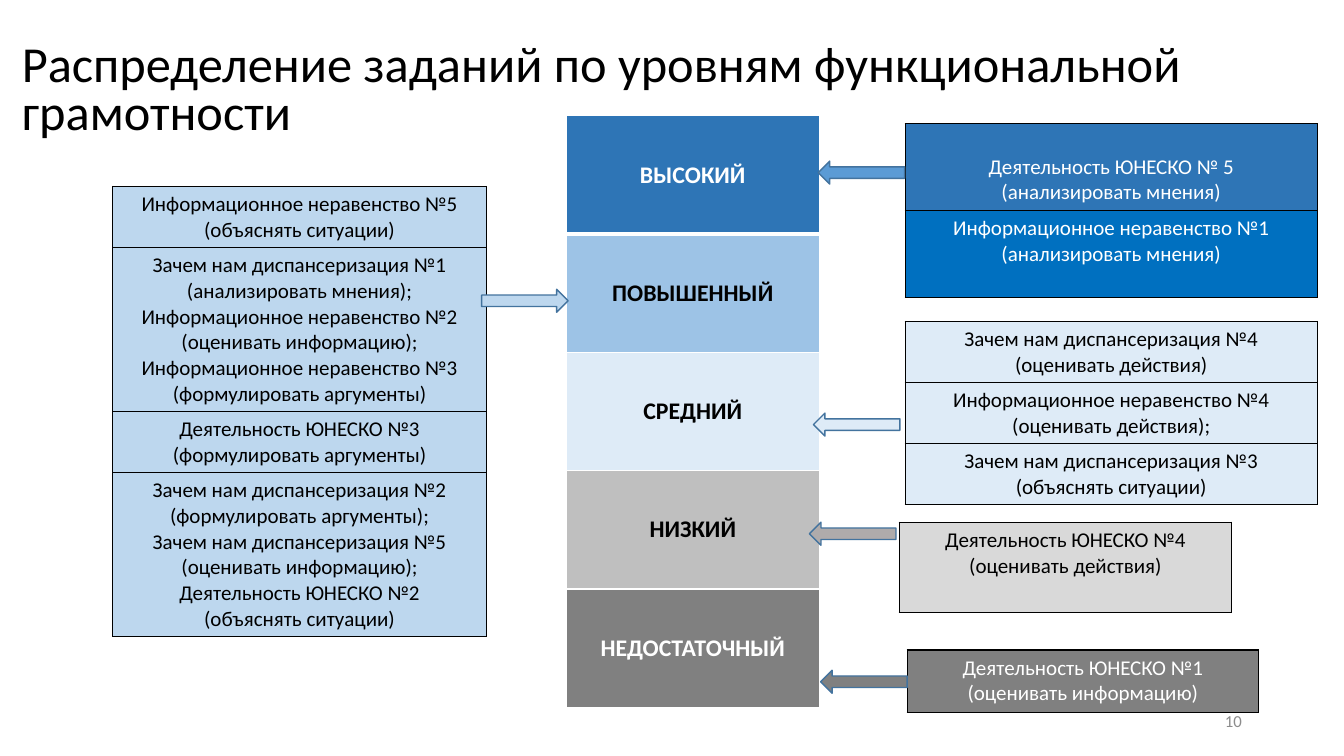
import pptx
import pptx.util
import pptx.dml.color
import pptx.enum.shapes
import pptx.enum.text
import pptx.oxml
import pptx.oxml.ns

Cm, Pt = pptx.util.Cm, pptx.util.Pt
RGB = pptx.dml.color.RGBColor
ALIGN = pptx.enum.text.PP_ALIGN
ANCHOR = pptx.enum.text.MSO_ANCHOR
SHAPE = pptx.enum.shapes.MSO_SHAPE

BLACK = RGB(0x00, 0x00, 0x00)
WHITE = RGB(0xFF, 0xFF, 0xFF)
DEEP = RGB(0x2E, 0x75, 0xB6)
VIVID = RGB(0x00, 0x70, 0xC0)
BLUE = RGB(0x5B, 0x9B, 0xD5)
EDGE = RGB(0x43, 0x73, 0x9E)
SKY = RGB(0x9D, 0xC3, 0xE6)
PALE = RGB(0xBD, 0xD7, 0xEE)
ICE = RGB(0xDE, 0xEB, 0xF7)
LIGHT = RGB(0xD9, 0xD9, 0xD9)
SILVER = RGB(0xBF, 0xBF, 0xBF)
ASH = RGB(0xAF, 0xAB, 0xAB)
GREY = RGB(0x80, 0x80, 0x80)
FAINT = RGB(0x8C, 0x8C, 0x8C)


def write(frame, text, size=15, color=BLACK, bold=False, align=ALIGN.CENTER, space=None):
    """Fill a text frame, one paragraph for each line of text."""
    frame.word_wrap = True
    for i, line in enumerate(text.split("\n")):
        para = frame.paragraphs[0] if i == 0 else frame.add_paragraph()
        para.alignment = align
        para.line_spacing = space
        run = para.add_run()
        run.text = line
        font = run.font
        font.name, font.size, font.bold = "Calibri", Pt(size), bold
        font.color.rgb = color


class Page:
    def __init__(self, deck):
        self.shapes = deck.slides.add_slide(deck.slide_layouts[6]).shapes

    def text(self, x, y, w, h, text, anchor=ANCHOR.MIDDLE, top=0.13, **style):
        frame = self.shapes.add_textbox(Cm(x), Cm(y), Cm(w), Cm(h)).text_frame
        frame.vertical_anchor = anchor
        frame.margin_top = Cm(top)
        write(frame, text, **style)

    def arrow(self, x, y, fill, kind=SHAPE.LEFT_ARROW):
        shape = self.shapes.add_shape(kind, Cm(x), Cm(y), Cm(2.18), Cm(0.58))
        shape.shadow.inherit = False
        shape.fill.solid()
        shape.fill.fore_color.rgb = fill
        shape.line.color.rgb = EDGE
        shape.line.width = Pt(1)

    def border(self, cell, color, low):
        props = cell._tc.get_or_add_tcPr()
        for i, side in enumerate("LRTB"):
            width = Pt(low if side == "B" else 1)
            props.insert(i, pptx.oxml.parse_xml(
                f'<a:ln{side} {pptx.oxml.ns.nsdecls("a")} w="{width}"><a:solidFill>'
                f'<a:srgbClr val="{color}"/></a:solidFill></a:ln{side}>'))

    def table(self, x, y, w, rows, edge=BLACK, **style):
        """Draw one column; a row is height, text, fill, ink, anchor, lower border."""
        total = sum(row[0] for row in rows)
        grid = self.shapes.add_table(len(rows), 1, Cm(x), Cm(y), Cm(w), Cm(total)).table
        grid.first_row = grid.horz_banding = False
        for i, (high, text, fill, ink, anchor, low) in enumerate(rows):
            grid.rows[i].height = Cm(high)
            cell = grid.cell(i, 0)
            cell.margin_left = cell.margin_right = Cm(0.2)
            cell.margin_top = cell.margin_bottom = Cm(0.13)
            cell.vertical_anchor = anchor
            cell.fill.solid()
            cell.fill.fore_color.rgb = fill
            self.border(cell, edge, low)
            write(cell.text_frame, text, color=ink, **style)


def row(high, text, fill, ink=BLACK, anchor=ANCHOR.TOP, low=1):
    return high, text, fill, ink, anchor, low


def main():
    deck = pptx.Presentation()
    deck.slide_width, deck.slide_height = Cm(33.87), Cm(19.05)
    page = Page(deck)

    # Title and slide number
    page.text(0.3, 0.48, 31.24, 2.82,
              "Распределение заданий по уровням функциональной грамотности",
              anchor=ANCHOR.TOP, top=0.62, size=36, align=ALIGN.LEFT, space=0.8)
    page.text(23.93, 17.65, 7.62, 1.02, "10", size=12, color=FAINT, align=ALIGN.RIGHT)

    # Scale of levels
    levels = [("ВЫСОКИЙ", DEEP, WHITE, 3), ("ПОВЫШЕННЫЙ", SKY, BLACK, 1),
              ("СРЕДНИЙ", ICE, BLACK, 1), ("НИЗКИЙ", SILVER, BLACK, 1),
              ("НЕДОСТАТОЧНЫЙ", GREY, WHITE, 1)]
    page.table(14.27, 2.92, 6.38,
               [row(2.98, name, fill, ink, ANCHOR.MIDDLE, low)
                for name, fill, ink, low in levels],
               edge=WHITE, size=17, bold=True)

    # Tasks of the raised level
    raised = [
        (1.54, "Информационное неравенство №5 (объяснять ситуации)"),
        (4.13, "Зачем нам диспансеризация №1 (анализировать мнения); "
               "Информационное неравенство №2 (оценивать информацию);\n"
               "Информационное неравенство №3 (формулировать аргументы)"),
        (1.54, "Деятельность ЮНЕСКО №3 (формулировать аргументы)"),
        (4.13, "Зачем нам диспансеризация №2 (формулировать аргументы);\n"
               "Зачем нам диспансеризация №5\n"
               "(оценивать информацию); Деятельность ЮНЕСКО №2\n"
               "(объяснять ситуации)")]
    page.table(2.84, 4.7, 9.42, [row(high, text, PALE) for high, text in raised])

    # Tasks of the high level
    page.table(22.81, 3.12, 10.39, [
        row(2.19, "Деятельность ЮНЕСКО № 5\n(анализировать мнения)",
            DEEP, WHITE, ANCHOR.BOTTOM),
        row(2.19, "Информационное неравенство №1 (анализировать мнения)", VIVID, WHITE)])

    # Tasks of the middle level
    middle = ["Зачем нам диспансеризация №4\n(оценивать действия)",
              "Информационное неравенство №4 (оценивать действия);",
              "Зачем нам диспансеризация №3\n(объяснять ситуации)"]
    page.table(22.81, 8.1, 10.39, [row(1.54, text, ICE) for text in middle])

    # Tasks of the low and the lowest level
    page.table(22.66, 13.16, 8.38, [
        row(2.27, "Деятельность ЮНЕСКО №4 (оценивать действия)", LIGHT)])
    page.table(22.86, 16.38, 8.86, [
        row(1.57, "Деятельность ЮНЕСКО №1 (оценивать информацию)", GREY, WHITE)])

    # Arrows from tasks to levels
    page.arrow(12.14, 7.29, PALE, SHAPE.RIGHT_ARROW)
    for x, y, fill in [(20.62, 4.06, BLUE), (20.5, 10.41, ICE),
                       (20.4, 13.16, ASH), (20.68, 16.89, GREY)]:
        page.arrow(x, y, fill)

    deck.save("out.pptx")


if __name__ == "__main__":
    main()
